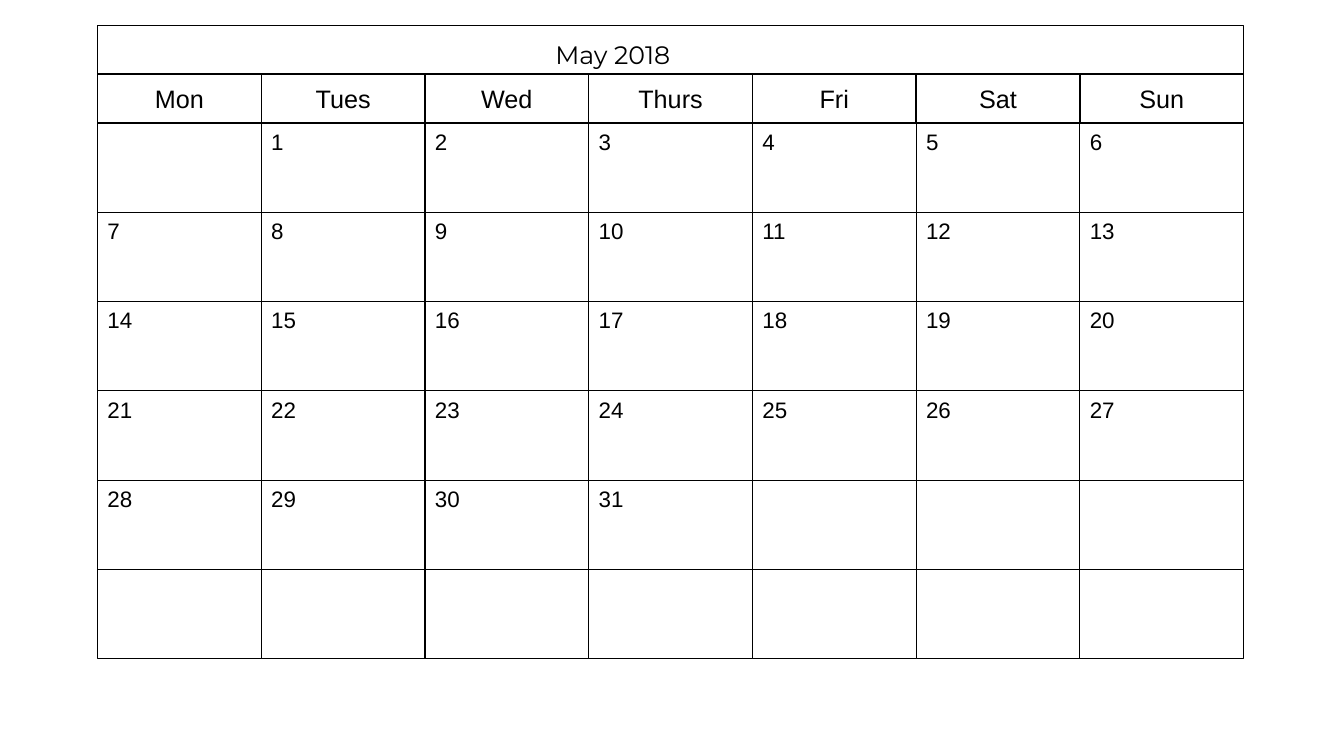
"""Build a one-month calendar slide."""
from dataclasses import dataclass

from pptx import Presentation
from pptx.dml.color import RGBColor
from pptx.enum import shapes, text
from pptx.util import Cm, Pt

MONTH = "May 2018"
NAMES = ["Mon", "Tues", "Wed", "Thurs", "Fri", "Sat", "Sun"]
FIRST, LAST, WEEKS = 1, 31, 6
DATES = [""] * FIRST + [str(day) for day in range(1, LAST + 1)]
DATES += [""] * (WEEKS * len(NAMES) - len(DATES))

LEFT, TOP, WIDTH = 2.46, 0.64, 28.88
HEAD, WEEK = 1.23, 2.25
COL = WIDTH / len(NAMES)


@dataclass(frozen=True)
class Theme:
    """Colours, fonts and sizes."""
    ink: RGBColor = RGBColor(0, 0, 0)
    paper: RGBColor = RGBColor(255, 255, 255)
    title: str = "Montserrat"
    body: str = "Arial"
    large: int = 18
    small: int = 16
    thick: float = 1
    thin: float = 0.75


THEME = Theme()


def write(shape, words, face, size, align, anchor):
    """Set and format the text of a shape."""
    frame = shape.text_frame
    frame.text = words
    frame.vertical_anchor = anchor
    para = frame.paragraphs[0]
    para.alignment = align
    for run in para.runs:
        run.font.name, run.font.size = face, Pt(size)
        run.font.color.rgb = THEME.ink


def box(slide, x, y, w, h, line):
    """Add a white outlined rectangle."""
    rect = slide.shapes.add_shape(
        shapes.MSO_SHAPE.RECTANGLE, Cm(x), Cm(y), Cm(w), Cm(h))
    rect.shadow.inherit = False
    rect.fill.solid()
    rect.fill.fore_color.rgb = THEME.paper
    rect.line.color.rgb = THEME.ink
    rect.line.width = Pt(line)
    return rect


def banner(slide):
    """Place the month title in its band."""
    band = box(slide, LEFT, TOP, WIDTH, HEAD, THEME.thick)
    title = slide.shapes.title
    band.element.addnext(title.element)
    title.left, title.top = Cm(13.74), Cm(0.86)
    title.width, title.height = Cm(3.86), Cm(1.02)
    title.fill.solid()
    title.fill.fore_color.rgb = THEME.paper
    write(title, MONTH, THEME.title, THEME.large,
          text.PP_ALIGN.LEFT, text.MSO_ANCHOR.TOP)
    title.text_frame.word_wrap = False
    title.text_frame.auto_size = text.MSO_AUTO_SIZE.SHAPE_TO_FIT_TEXT


def header(slide):
    """Draw the row of weekday names."""
    for col, name in enumerate(NAMES):
        cell = box(slide, LEFT + col * COL, TOP + HEAD, COL, HEAD, THEME.thick)
        frame = cell.text_frame
        frame.margin_top = frame.margin_bottom = Cm(0.05)
        write(cell, name, THEME.body, THEME.large,
              text.PP_ALIGN.CENTER, text.MSO_ANCHOR.MIDDLE)


def days(slide):
    """Draw the grid of dates."""
    for spot, date in enumerate(DATES):
        row, col = divmod(spot, len(NAMES))
        cell = box(slide, LEFT + col * COL, TOP + 2 * HEAD + row * WEEK,
                   COL, WEEK, THEME.thin)
        if date:
            write(cell, date, THEME.body, THEME.small,
                  text.PP_ALIGN.LEFT, text.MSO_ANCHOR.TOP)


def main():
    """Build and save the deck."""
    deck = Presentation()
    deck.slide_width, deck.slide_height = Cm(33.87), Cm(19.05)
    slide = deck.slides.add_slide(deck.slide_layouts.get_by_name("Title Only"))
    banner(slide)
    header(slide)
    days(slide)
    deck.save("out.pptx")


if __name__ == "__main__":
    main()
